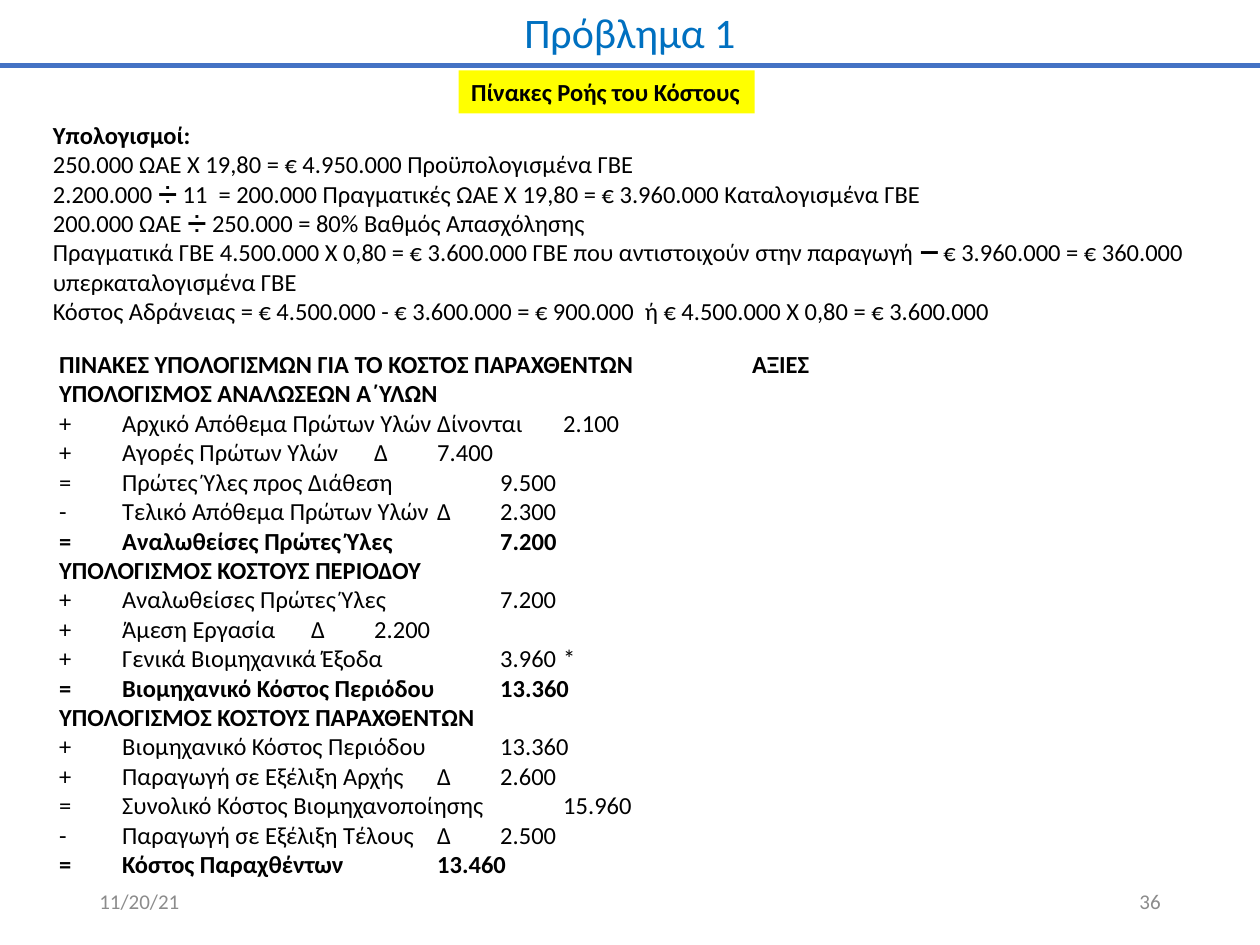
from dataclasses import dataclass

from lxml.etree import SubElement
from pptx import Presentation
from pptx.dml.color import RGBColor
from pptx.enum.shapes import MSO_CONNECTOR, MSO_SHAPE
from pptx.enum.text import MSO_ANCHOR, MSO_AUTO_SIZE, PP_ALIGN
from pptx.oxml.ns import qn
from pptx.util import Inches, Pt

FONT = "Calibri"
BLACK = RGBColor(0x00, 0x00, 0x00)
TITLE_BLUE = RGBColor(0x00, 0x70, 0xC0)
RULE_BLUE = RGBColor(0x44, 0x72, 0xC4)
YELLOW = RGBColor(0xFF, 0xFF, 0x00)
GRAY = RGBColor(0x8C, 0x8C, 0x8C)

# Tab stops: label, note, value, footnote mark
COST_TABS = [(0.38, "l"), (5.78, "r"), (6.53, "r"), (7.0, "l")]


@dataclass
class Line:
    text: str
    bold: bool = False


def heading(label: str, value: str = "") -> Line:
    return Line(f"{label}\t\t{value}" if value else label, True)


def entry(sign: str, label: str, value: str, note: str = "", mark: str = "") -> Line:
    text = f"{sign}\t{label}\t{note}\t{value}"
    return Line(f"{text}\t{mark}" if mark else text)


def total(label: str, value: str) -> Line:
    return Line(entry("=", label, value).text, True)


CALCULATIONS = [
    Line("Υπολογισμοί:", True),
    Line("250.000 ΩΑΕ Χ 19,80 = € 4.950.000 Προϋπολογισμένα ΓΒΕ"),
    Line("2.200.000 ➗ 11  = 200.000 Πραγματικές ΩΑΕ Χ 19,80 = € 3.960.000 Καταλογισμένα ΓΒΕ"),
    Line("200.000 ΩΑΕ ➗ 250.000 = 80% Βαθμός Απασχόλησης"),
    Line("Πραγματικά ΓΒΕ 4.500.000 Χ 0,80 = € 3.600.000 ΓΒΕ που αντιστοιχούν στην παραγωγή "
         "➖ € 3.960.000 = € 360.000 υπερκαταλογισμένα ΓΒΕ"),
    Line("Κόστος Αδράνειας = € 4.500.000 - € 3.600.000 = € 900.000  ή "
         "€ 4.500.000 Χ 0,80 = € 3.600.000"),
]

COST_LINES = [
    heading("ΠΙΝΑΚΕΣ ΥΠΟΛΟΓΙΣΜΩΝ ΓΙΑ ΤΟ ΚΟΣΤΟΣ ΠΑΡΑΧΘΕΝΤΩΝ", "ΑΞΙΕΣ"),
    heading("ΥΠΟΛΟΓΙΣΜΟΣ ΑΝΑΛΩΣΕΩΝ Α΄ΥΛΩΝ"),
    entry("+", "Αρχικό Απόθεμα Πρώτων Υλών", "2.100", "Δίνονται"),
    entry("+", "Αγορές Πρώτων Υλών", "7.400", "Δ"),
    entry("=", "Πρώτες Ύλες προς Διάθεση", "9.500"),
    entry("-", "Τελικό Απόθεμα Πρώτων Υλών", "2.300", "Δ"),
    total("Αναλωθείσες Πρώτες Ύλες", "7.200"),
    heading("ΥΠΟΛΟΓΙΣΜΟΣ ΚΟΣΤΟΥΣ ΠΕΡΙΟΔΟΥ"),
    entry("+", "Αναλωθείσες Πρώτες Ύλες", "7.200"),
    entry("+", "Άμεση Εργασία", "2.200", "Δ"),
    entry("+", "Γενικά Βιομηχανικά Έξοδα", "3.960", mark="*"),
    total("Βιομηχανικό Κόστος Περιόδου", "13.360"),
    heading("ΥΠΟΛΟΓΙΣΜΟΣ ΚΟΣΤΟΥΣ ΠΑΡΑΧΘΕΝΤΩΝ"),
    entry("+", "Βιομηχανικό Κόστος Περιόδου", "13.360"),
    entry("+", "Παραγωγή σε Εξέλιξη Αρχής", "2.600", "Δ"),
    entry("=", "Συνολικό Κόστος Βιομηχανοποίησης", "15.960"),
    entry("-", "Παραγωγή σε Εξέλιξη Τέλους", "2.500", "Δ"),
    total("Κόστος Παραχθέντων", "13.460"),
]


def place(sp, left: float, top: float, width: float, height: float) -> None:
    sp.left, sp.top = Inches(left), Inches(top)
    sp.width, sp.height = Inches(width), Inches(height)


def write(p, text: str, size: int, color: RGBColor, bold: bool = False,
          align: PP_ALIGN = PP_ALIGN.LEFT) -> None:
    p.text = text
    p.alignment = align
    for r in p.runs:
        r.font.name, r.font.size, r.font.bold = FONT, Pt(size), bold
        r.font.color.rgb = color


def set_plain_list(p, tabs: list[tuple[float, str]]) -> None:
    """Remove bullet, indent and spacing, and add the tab stops."""
    p.space_before = p.space_after = Pt(0)
    p.line_spacing = 1.0
    pPr = p._p.get_or_add_pPr()
    pPr.set("marL", "0")
    pPr.set("indent", "0")
    SubElement(pPr, qn("a:buNone"))
    if tabs:
        tab_list = SubElement(pPr, qn("a:tabLst"))
        for position, align in tabs:
            SubElement(tab_list, qn("a:tab"), pos=str(Inches(position)), algn=align)


def fill_body(sp, lines: list[Line], tabs: list[tuple[float, str]]) -> None:
    tf = sp.text_frame
    tf.auto_size = MSO_AUTO_SIZE.NONE
    tf.vertical_anchor = MSO_ANCHOR.TOP
    for i, line in enumerate(lines):
        p = tf.paragraphs[0] if i == 0 else tf.add_paragraph()
        write(p, line.text, 14, BLACK, line.bold)
        set_plain_list(p, tabs)


def add_footer(s, text: str, left: float, align: PP_ALIGN) -> None:
    sp = s.shapes.add_textbox(Inches(left), Inches(6.95), Inches(2.25), Inches(0.4))
    tf = sp.text_frame
    tf.word_wrap = True
    tf.vertical_anchor = MSO_ANCHOR.MIDDLE
    write(tf.paragraphs[0], text, 12, GRAY, align=align)


def add_subtitle(s, text: str) -> None:
    sp = s.shapes.add_shape(MSO_SHAPE.RECTANGLE, Inches(3.64), Inches(0.56),
                            Inches(2.35), Inches(0.34))
    sp.shadow.inherit = False
    sp.fill.solid()
    sp.fill.fore_color.rgb = YELLOW
    sp.line.fill.background()
    sp.text_frame.word_wrap = False
    write(sp.text_frame.paragraphs[0], text, 14, BLACK, True)


def add_title_rule(s) -> None:
    y = Inches(0.52)
    rule = s.shapes.add_connector(MSO_CONNECTOR.STRAIGHT, 0, y, Inches(10), y)
    rule.line.color.rgb = RULE_BLUE
    rule.line.width = Pt(3)
    SubElement(rule._element.spPr, qn("a:effectLst"))


def main() -> None:
    prs = Presentation()
    prs.slide_width, prs.slide_height = Inches(10), Inches(7.5)
    s = prs.slides.add_slide(prs.slide_layouts.get_by_name("Two Content"))
    title, calculations, costs = s.placeholders

    place(title, 0, 0, 10, 0.5)
    title.text_frame.auto_size = MSO_AUTO_SIZE.NONE
    title.text_frame.vertical_anchor = MSO_ANCHOR.TOP
    write(title.text_frame.paragraphs[0], "Πρόβλημα 1", 24, TITLE_BLUE, align=PP_ALIGN.CENTER)

    place(calculations, 0.32, 0.9, 9.27, 1.75)
    fill_body(calculations, CALCULATIONS, [])
    place(costs, 0.37, 2.72, 9.27, 4.58)
    fill_body(costs, COST_LINES, COST_TABS)

    add_subtitle(s, "Πίνακες Ροής του Κόστους")
    add_footer(s, "11/20/21", 0.69, PP_ALIGN.LEFT)
    add_footer(s, "36", 7.06, PP_ALIGN.RIGHT)
    add_title_rule(s)
    prs.save("out.pptx")


if __name__ == "__main__":
    main()
